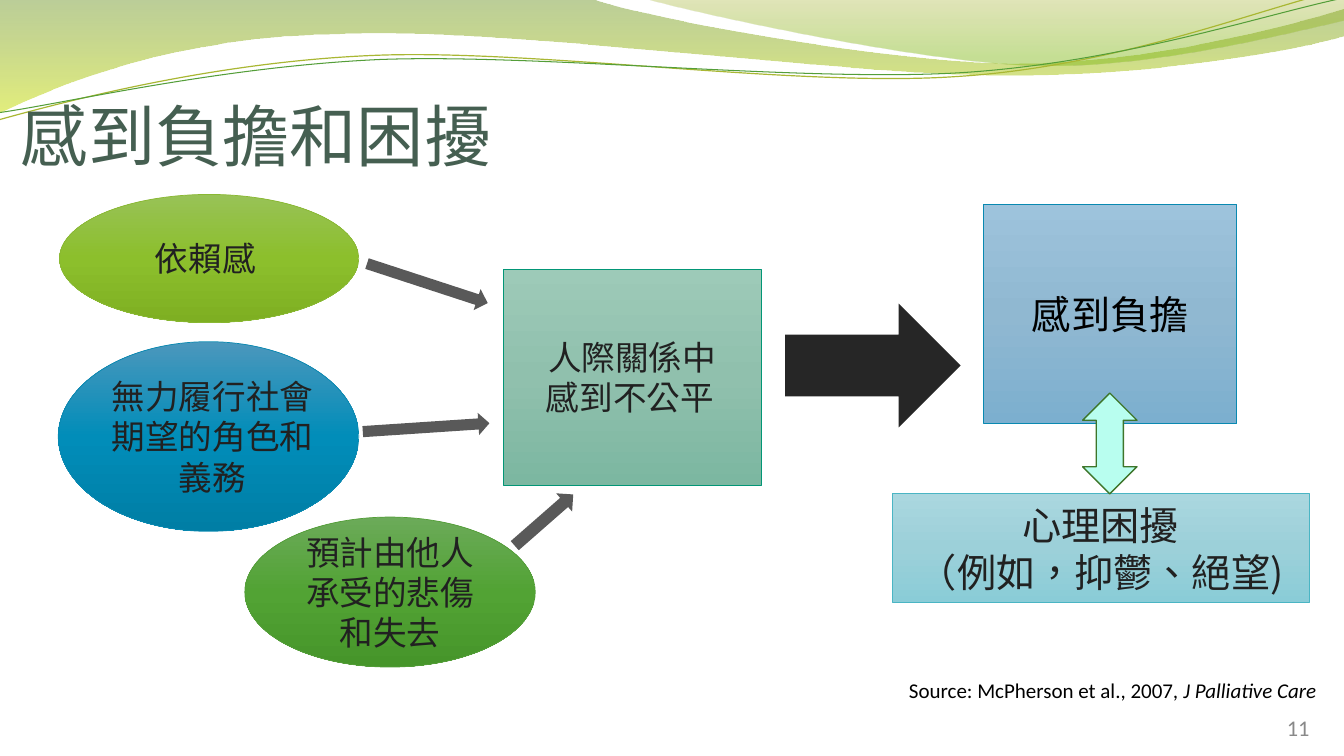
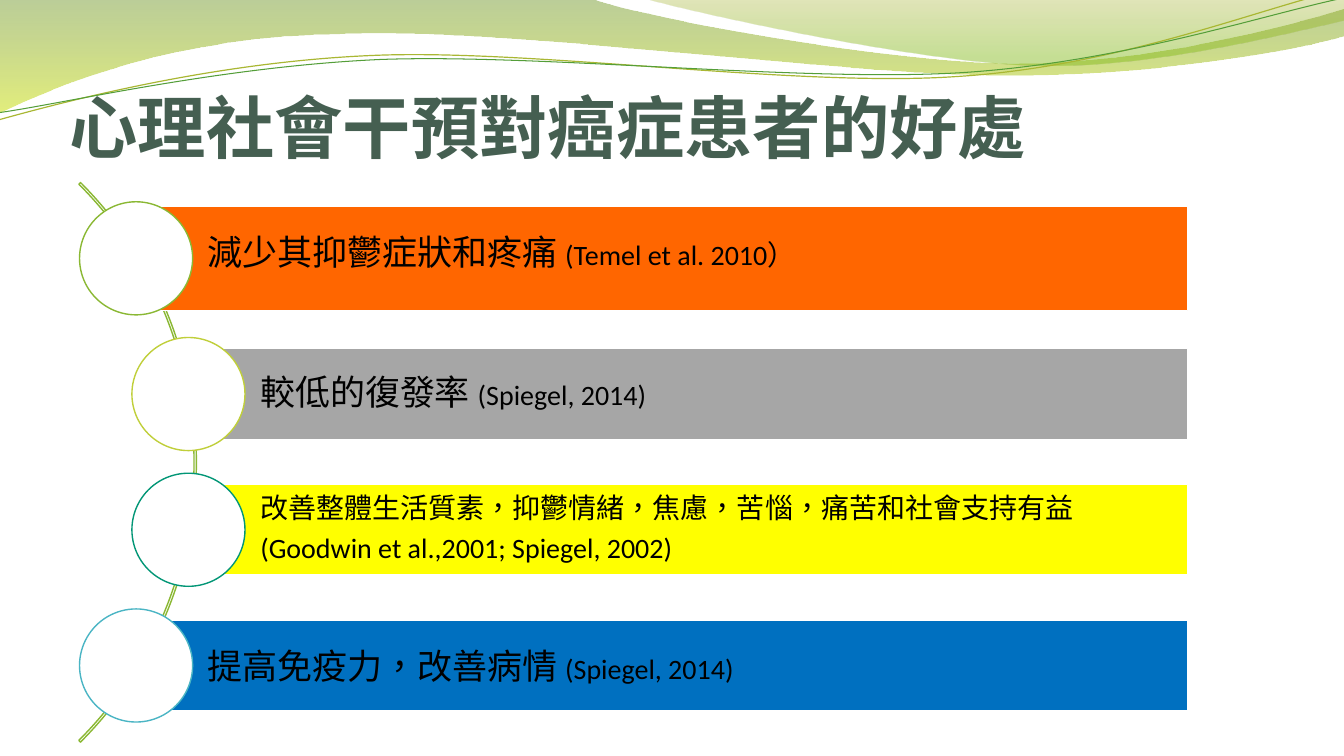
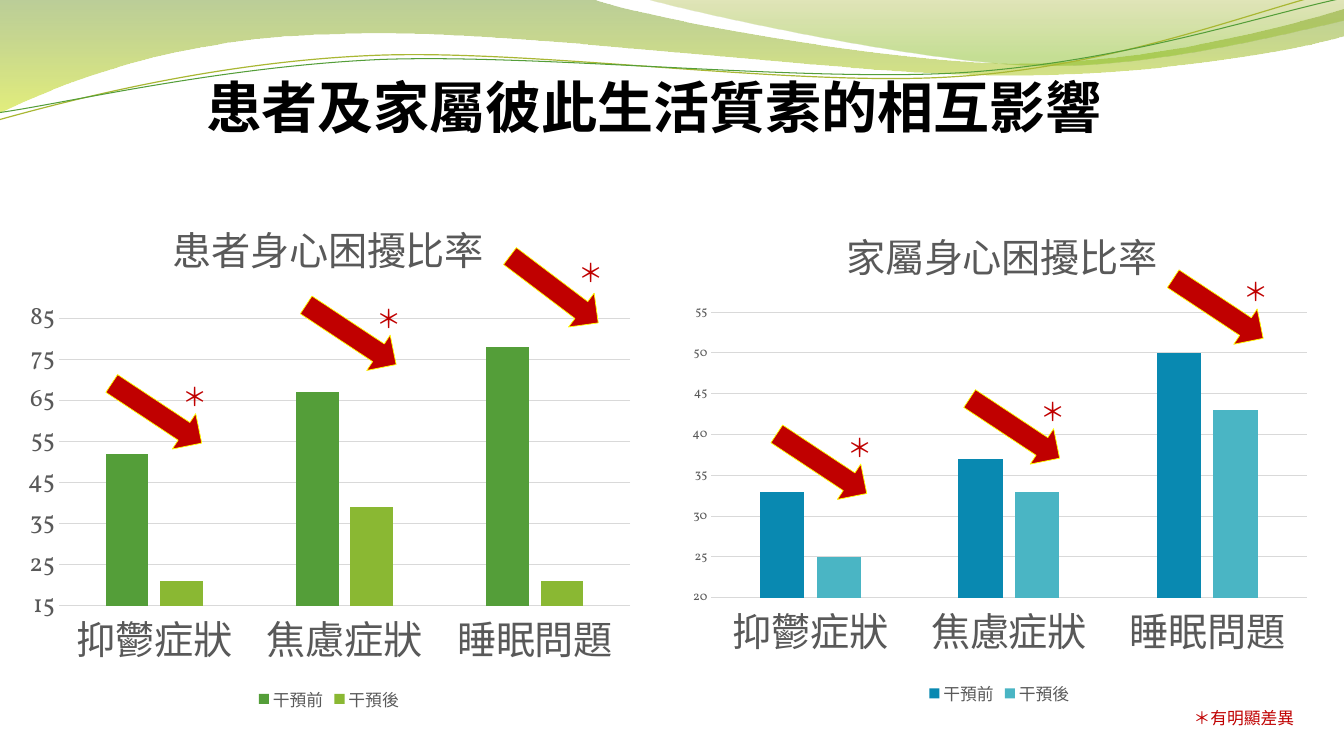
from lxml.etree import SubElement
from pptx import Presentation
from pptx.chart.data import CategoryChartData as ChartData
from pptx.dml.color import RGBColor
from pptx.enum.chart import XL_CHART_TYPE as Kind, XL_LEGEND_POSITION as Spot, XL_TICK_MARK as Tick
from pptx.enum.lang import MSO_LANGUAGE_ID as Lang
from pptx.enum.shapes import MSO_SHAPE as Form
from pptx.enum.text import MSO_ANCHOR as Anchor, PP_ALIGN as Align
from pptx.oxml import parse_xml
from pptx.oxml.ns import nsdecls, qn
from pptx.util import Cm, Pt

SANS, SERIF, LATIN = "Noto Sans CJK SC", "Vollkorn", "Calibri"
BLACK, INK, GREY, RULE = "000000", "212121", "595959", "D9D9D9"
TITLE, RED, WHITE = "455F51", "C00000", "FFFFFF"
GREEN, LIME, BLUE, AQUA = "549E39", "8AB833", "0989B1", "4AB5C4"
hue = RGBColor.from_string


def paint(shape, fill=None, line=None, width=0.5):
    shape.shadow.inherit = False
    if fill is None:
        shape.fill.background()
    elif isinstance(fill, str):
        shape.fill.solid()
        shape.fill.fore_color.rgb = hue(fill)
    else:
        shape.fill.gradient()
        shape.fill.gradient_angle = 270
        stops = next(shape.element.iter(qn("a:gsLst")))
        stops.clear()
        for place, tint, solid in fill:
            stop = SubElement(stops, qn("a:gs"), pos=str(place * 1000))
            color = SubElement(stop, qn("a:srgbClr"), val=tint)
            if solid < 100:
                SubElement(color, qn("a:alpha"), val=str(solid * 1000))
    if line:
        shape.line.color.rgb = hue(line)
        shape.line.width = Pt(width)
    else:
        shape.line.fill.background()
    return shape


def write(shape, text, size, color=BLACK, font=SANS, align=Align.LEFT,
          anchor=Anchor.TOP, pad=None, bold=False, tail=None):
    frame = shape.text_frame
    frame.word_wrap = True
    frame.vertical_anchor = anchor
    if pad:
        (frame.margin_left, frame.margin_top,
         frame.margin_right, frame.margin_bottom) = map(Cm, pad)
    frame.text = text
    for para in frame.paragraphs:
        para.alignment = align
        for run in para.runs:
            run.font.size = Pt(size)
    if tail:
        run = para.add_run()
        run.text, run.font.size, run.font.italic = tail[0], Pt(tail[1]), tail[2]
    for para in frame.paragraphs:
        for run in para.runs:
            run.font.name = font
            run.font.bold = bold
            run.font.color.rgb = hue(color)
            run.font.language_id = Lang.TRADITIONAL_CHINESE
            SubElement(run.font._element, qn("a:ea"), typeface=SANS)
    return frame


deck = Presentation()
deck.slide_width, deck.slide_height = Cm(33.87), Cm(19.05)
blank = deck.slide_layouts[6]
first, second, third = [deck.slides.add_slide(blank).shapes for _ in range(3)]

waves = [
    ([(0, 0), (14.91, -0.03), (16.1, 0.43, 22.45, 1.6, 25.68, 1.6),
      (28.88, 1.6, 32.44, 0.66, 33.86, 0.23), (33.88, 0.91),
      (33.3, 1.12, 29.44, 1.93, 25.25, 1.9), (21.06, 1.9, 12.93, 0.71, 8.71, 0.86),
      (4.37, 0.91, 1.55, 2.11, -0.05, 2.87), (0, 0)],
     [(0, "69921C", 45), (100, "CCE10F", 55)], None, 0),
    ([(16.21, -0.03), (17.25, 0.28, 23.09, 1.57, 26.04, 1.65),
      (28.96, 1.75, 32.56, 0.81, 33.86, 0.53), (33.86, 0), (16.21, -0.03)],
     [(0, "9BAA1A", 30), (80, "81BA16", 45)], None, 0),
    ([(-0.03, 3.02), (1.6, 2.57, 5.33, 1.57, 9.37, 1.4),
      (13.39, 1.22, 20.04, 2.21, 24.1, 1.93), (28.19, 1.68, 31.78, 0.2, 33.78, -0.25)],
     None, "A9B733", 0.85),
    ([(-0.03, 2.84), (1.57, 2.62, 5.54, 1.68, 9.58, 1.5),
      (13.64, 1.35, 20.22, 2.08, 24.26, 1.83), (28.3, 1.57, 31.88, 0.36, 33.86, -0.05)],
     None, GREEN, 0.75),
]
for route, fill, line, width in waves:
    dots = [(Cm(leg[k]), Cm(leg[k + 1])) for leg in route for k in range(0, len(leg), 2)]
    pen = first.build_freeform(*dots[0])
    pen.add_line_segments(dots[1:], close=fill is not None)
    wave = paint(pen.convert_to_shape(), fill, line, width)
    pulls = list(wave.element.iter(qn("a:lnTo")))
    for leg in route[1:]:
        pull = pulls.pop(0)
        if len(leg) == 6:
            pull.tag = qn("a:cubicBezTo")
            for _ in range(2):
                extra = pulls.pop(0)
                pull.append(extra[0])
                extra.getparent().remove(extra)
    blank.shapes.element.append(wave.element)

write(first.add_textbox(*map(Cm, (0.53, 0.74, 29.21, 3.68))), "感到負擔和困擾", 48,
      TITLE, "League Spartan", anchor=Anchor.BOTTOM, pad=(0, 0.18, 0, 0))

arrows = [
    (Form.RIGHT_ARROW, (9.17, 6.86, 3.2, 0.56), 18.1, GREY, None),
    (Form.RIGHT_ARROW, (9.14, 10.49, 3.2, 0.56), 356.2, GREY, None),
    (Form.RIGHT_ARROW, (12.73, 12.8, 1.96, 0.61), 318.8, GREY, None),
    (Form.RIGHT_ARROW, (19.79, 7.65, 4.42, 3.12), 0, "262626", None),
    (Form.LEFT_RIGHT_ARROW, (26.7, 10.49, 2.54, 1.37), 270, "B8FEEF", "3E752A"),
]
nodes = [
    (Form.OVAL, (1.5, 4.9, 7.54, 3.23), "98C256 8CBF2C 7EAF22", LIME,
     "依賴感 ", 24, INK, 0, 0, None),
    (Form.OVAL, (1.47, 8.61, 7.57, 4.78), "4B97BC 018DB9 007EA5", BLUE,
     "無力履行社會期望的角色和義務", 24, INK, 0.2, 0, None),
    (Form.OVAL, (6.17, 13.03, 7.32, 3.78), "6BAA59 52A334 46952A", GREEN,
     "預計由他人承受的悲傷和失去", 24, INK, 0.25, 0.25, None),
    (Form.RECTANGLE, (12.68, 6.78, 6.5, 5.44), "9DCAB8 90C0AD 7CB7A1", "029676",
     "人際關係中\n感到不公平", 24, INK, 0, 0, (" ", 14, False)),
    (Form.RECTANGLE, (24.79, 5.14, 6.38, 5.54), "9DC3DC 90B8D1 7CAFCF", BLUE,
     "感到負擔", 28, BLACK, 0, 0, None),
    (Form.RECTANGLE, (22.48, 12.44, 10.52, 2.74), "AAD7DF 9CD0D9 8ACCD7", AQUA,
     "心理困擾\n（例如，抑鬱、絕望)", 28, INK, 0, 0, None),
]
for form, box, tints, line, text, size, color, left, right, tail in nodes:
    node = first.add_shape(form, *map(Cm, box))
    paint(node, [(place, tint, 100) for place, tint in zip((0, 50, 100), tints.split())], line)
    write(node, text, size, color, align=Align.CENTER, anchor=Anchor.MIDDLE,
          pad=(left, 0.1, right, 0.1), tail=tail)
for form, box, turn, fill, line in arrows:
    arrow = paint(first.add_shape(form, *map(Cm, box)), fill, line, 1)
    arrow.rotation = turn

write(first.add_textbox(*map(Cm, (21.18, 16.94, 12.24, 0.89))),
      "Source: McPherson et al., 2007", 15, font=LATIN, align=Align.RIGHT,
      tail=(", J Palliative Care", 15, True))
write(first.add_textbox(*map(Cm, (25.1, 17.65, 7.9, 1.02))), "11", 16, "898989", LATIN,
      Align.RIGHT, Anchor.BOTTOM, (0, 0, 0, 0))

write(second.add_textbox(*map(Cm, (1.75, 1.96, 25.35, 2.26))),
      "心理社會干預對癌症患者的好處", 48.8, TITLE, anchor=Anchor.BOTTOM,
      pad=(0, 0.13, 0, 0), bold=True)
arc = paint(second.add_shape(Form.BLOCK_ARC, *map(Cm, (-14.99, 1.68, 19.94, 19.94))),
            None, LIME, 1)
for k, turn in enumerate((189, 27, 0.003)):
    arc.adjustments[k] = turn

gains = [
    (3.43, 2.64, "FF6600", LIME, "減少其抑鬱症狀和疼痛 ", 25, "(Temel et al. 2010）", Pt(20), 7),
    (4.75, 2.29, "A6A6A6", "C0CF3A", "較低的復發率 ", 25, "(Spiegel, 2014)", 0.9, 7),
    (4.75, 2.29, "FFFF00", "029676",
     "改善整體生活質素，抑鬱情緒，焦慮，苦惱，痛苦和社會支持有益\n"
     "(Goodwin et al.,2001; Spiegel, 2002)", 20, None, 0.9, 7),
    (3.43, 2.29, "0070C0", AQUA, "提高免疫力，改善病情 ", 25, "(Spiegel, 2014)", 1.0, 0),
]
TOP, PITCH, RIGHT, DISC = 6.51, 3.42, 29.93, 2.85
for row, (left, tall, fill, ring, text, size, cite, gap, after) in enumerate(gains):
    mid = TOP + row * PITCH
    bar = second.add_shape(Form.RECTANGLE, *map(Cm, (left, mid - tall / 2, RIGHT - left, tall)))
    frame = write(paint(bar, fill, WHITE, 1), text, size, font=LATIN, anchor=Anchor.MIDDLE,
                  pad=(1.81, 0.17, 0.17, 0.17), tail=cite and (cite, 20, False))
    for para in frame.paragraphs:
        para.line_spacing, para.space_after = gap, Pt(after)
    disc = second.add_shape(Form.OVAL, *map(Cm, (left - DISC / 2, mid - DISC / 2, DISC, DISC)))
    paint(disc, WHITE, ring, 1)

write(third.add_textbox(*map(Cm, (1.88, 1.7, 29.18, 1.96))),
      "患者及家屬彼此生活質素的相互影響", 40, align=Align.CENTER, bold=True)
write(third.add_textbox(*map(Cm, (25.76, 17.7, 7.11, 0.76))), "＊有明顯差異", 12, RED,
      SERIF, Align.RIGHT)

graphs = [
    ("患者身心困擾比率", (0.38, 4.87, 15.82, 13.16), (52, 67, 78), (21, 39, 21), (GREEN, LIME),
     (15, 85, 10), 18, (0.24, 0.03), (0.07, 0.24, 0.91, 0.55)),
    ("家屬身心困擾比率", (17.12, 5.04, 16.13, 12.85), (33, 37, 50), (25, 33, 43), (BLUE, AQUA),
     (20, 55, 5), 9, (0.25, 0.03), (0.05, 0.22, 0.93, 0.56)),
]
for name, box, before, after, tints, scale, size, head, area in graphs:
    data = ChartData()
    data.categories = ["抑鬱症狀", "焦慮症狀", "睡眠問題"]
    data.add_series("干預前", before)
    data.add_series("干預後", after)
    chart = third.add_chart(Kind.COLUMN_CLUSTERED, *map(Cm, box), data).chart
    chart.font.size, chart.font.name = Pt(10), SERIF
    plot = chart.plots[0]
    plot.gap_width, plot.overlap, plot.vary_by_categories = 219, -27, False
    for series, tint in zip(plot.series, tints):
        series.format.fill.solid()
        series.format.fill.fore_color.rgb = hue(tint)

    chart.has_title = chart.has_legend = True
    chart.legend.position, chart.legend.include_in_layout = Spot.BOTTOM, False
    label = chart.chart_title.text_frame
    label.text = name
    cats, vals = chart.category_axis, chart.value_axis
    fonts = [(label.paragraphs[0].runs[0].font, 28, SANS), (chart.legend.font, 12, SANS),
             (cats.tick_labels.font, 28, SANS), (vals.tick_labels.font, size, SERIF)]
    for font, points, face in fonts:
        font.size, font.name, font.bold = Pt(points), face, False
        font.color.rgb = hue(GREY)
    for latin in list(chart.element.iter(qn("a:latin"))):
        latin.addnext(parse_xml(f'<a:ea {nsdecls("a")} typeface="{SANS}"/>'))

    vals.minimum_scale, vals.maximum_scale, vals.major_unit = scale
    vals.format.line.fill.background()
    for axis in (cats, vals):
        axis.major_tick_mark = axis.minor_tick_mark = Tick.NONE
    for line in (cats.format.line, vals.major_gridlines.format.line):
        line.color.rgb, line.width = hue(RULE), Pt(0.75)

    title = chart.chart_title._element
    field = next(chart.element.iter(qn("c:plotArea")))
    for part, index, place in ((title, 1, head), (field, 0, area)):
        for old in part.findall(qn("c:layout")):
            part.remove(old)
        layout = parse_xml(f'<c:layout {nsdecls("c")}><c:manualLayout/></c:layout>')
        if part is field:
            SubElement(layout[0], qn("c:layoutTarget"), val="inner")
        for key in ("xMode", "yMode"):
            SubElement(layout[0], qn("c:" + key), val="edge")
        for key, share in zip("xywh", place):
            SubElement(layout[0], qn("c:" + key), val=str(share))
        part.insert(index, layout)

drops = [(2.59, 9.88, 2.72, 33.5), (7.49, 7.9, 2.72, 33.5), (12.57, 6.76, 2.79, 37.1),
         (19.35, 11.15, 2.72, 33.5), (24.21, 10.26, 2.72, 33.5), (29.34, 7.24, 2.72, 33.5)]
for left, top, wide, turn in drops:
    drop = third.add_shape(Form.RIGHT_ARROW, *map(Cm, (left, top, wide, 1.07)))
    paint(drop, RED, "FFFF00").rotation = turn
    star = third.add_textbox(*map(Cm, (left + 1.76, top - 0.39, 1.55, 0.91)))
    write(star, "＊", 18, RED, SERIF)

deck.save("out.pptx")
